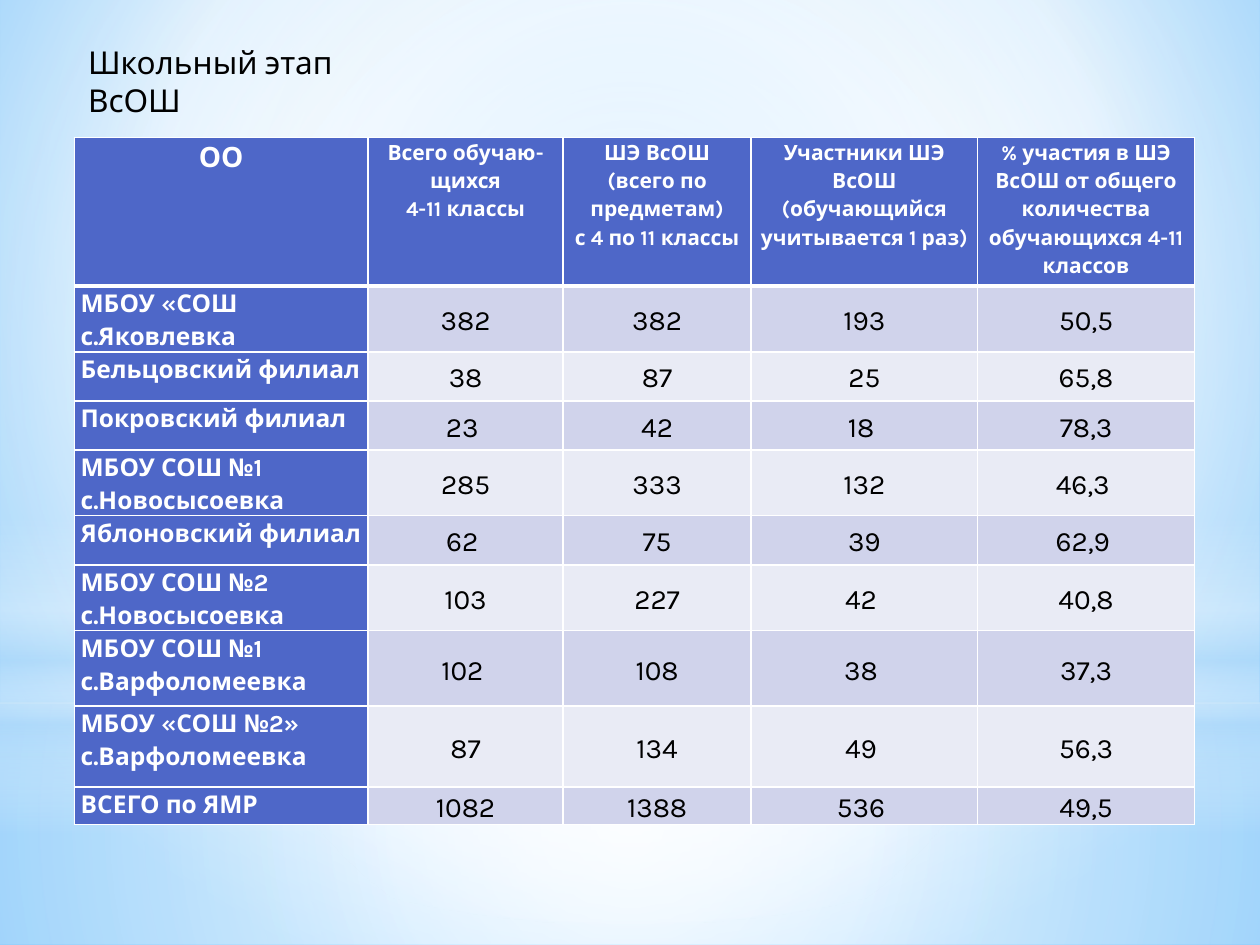
from dataclasses import dataclass
from typing import Optional

from lxml.etree import SubElement
from pptx import Presentation
from pptx.dml.color import RGBColor
from pptx.enum.shapes import MSO_SHAPE
from pptx.enum.text import MSO_ANCHOR, PP_ALIGN
from pptx.oxml.ns import qn
from pptx.util import Inches, Pt


@dataclass(frozen=True)
class Theme:
    font: str = "Karla"
    white: str = "FFFFFF"
    black: str = "000000"
    sky: str = "B4DCFA"
    accent: str = "4E67C8"
    bands: tuple = ("D0D3EB", "E9EBF5")
    title_size: int = 18
    corner_size: int = 16
    header_size: int = 12
    label_size: int = 14
    value_size: int = 16


THEME = Theme()


@dataclass(frozen=True)
class Gradient:
    """Stops are (position, colour, opacity) with percentages; without a focus it runs downwards."""
    stops: tuple
    focus: Optional[tuple] = None


@dataclass(frozen=True)
class Glow:
    preset: MSO_SHAPE
    top: float
    height: float
    gradient: Gradient


@dataclass(frozen=True)
class CellStyle:
    fill: str
    color: str
    size: int
    bold: bool
    align: PP_ALIGN
    anchor: MSO_ANCHOR


CENTRE = (50, 50, 50, 50)
BACKDROP = Gradient(((0, "9ED5FF", 100), (60, THEME.white, 100), (100, "5BB9FF", 100)),
                    (20, 10, 20, 60))
GLOWS = (
    Glow(MSO_SHAPE.RECTANGLE, 5.58, 1.92, Gradient(
        ((0, THEME.white, 91), (37, THEME.white, 76), (100, THEME.sky, 79)), CENTRE)),
    Glow(MSO_SHAPE.RECTANGLE, 0, 5.58, Gradient(
        ((0, THEME.white, 89), (48, THEME.white, 62), (100, THEME.sky, 79)), CENTRE)),
    Glow(MSO_SHAPE.RECTANGLE, 4.12, 2.5, Gradient(
        ((0, THEME.white, 0), (29, THEME.white, 30), (45, THEME.sky, 40),
         (55, THEME.white, 26), (65, THEME.sky, 60), (100, THEME.white, 0)))),
    Glow(MSO_SHAPE.OVAL, 1.75, 5.58, Gradient(
        ((0, THEME.white, 100), (56, THEME.white, 0)), CENTRE)),
)

COLUMN_WIDTHS = (2.33, 1.55, 1.49, 1.8, 1.72)
ROW_HEIGHTS = (1.18,) + (0.39,) * 6 + (0.6, 0.64, 0.2)
HEADERS = (
    "ОО",
    "Всего обучаю-щихся\n4-11 классы",
    "ШЭ ВсОШ (всего по предметам)\nс 4 по 11 классы",
    "Участники ШЭ ВсОШ (обучающийся учитывается 1 раз)",
    "% участия в ШЭ ВсОШ от общего количества обучающихся 4-11 классов",
)
SCHOOLS = (
    ("МБОУ «СОШ с.Яковлевка", "382", "382", "193", "50,5"),
    ("Бельцовский филиал", "38", "87", "25", "65,8"),
    ("Покровский филиал", "23 ", "42", "18 ", "78,3"),
    ("МБОУ СОШ №1 с.Новосысоевка", "285", "333", "132", "46,3 "),
    ("Яблоновский филиал", "62 ", "75", "39", "62,9 "),
    ("МБОУ СОШ №2 с.Новосысоевка", "103", "227", "42 ", "40,8"),
    ("МБОУ СОШ №1 с.Варфоломеевка", "102 ", "108", "38 ", "37,3"),
    ("МБОУ «СОШ №2» с.Варфоломеевка", "87", "134", "49 ", "56,3"),
    ("ВСЕГО по ЯМР", "1082", "1388", "536 ", "49,5"),
)


def apply_gradient(owner, gradient: Gradient) -> None:
    """Turn the solid fill found inside owner into a gradient."""
    solid = owner.find(".//" + qn("a:solidFill"))
    fill = solid.makeelement(qn("a:gradFill"), {"rotWithShape": "1"})
    stops = SubElement(fill, qn("a:gsLst"))
    for position, color, opacity in gradient.stops:
        stop = SubElement(stops, qn("a:gs"), pos=str(position * 1000))
        rgb = SubElement(stop, qn("a:srgbClr"), val=color)
        if opacity < 100:
            SubElement(rgb, qn("a:alpha"), val=str(opacity * 1000))
    if gradient.focus:
        shade = SubElement(fill, qn("a:path"), {"path": "circle"})
        edges = {side: str(value * 1000) for side, value in zip("ltrb", gradient.focus)}
        SubElement(shade, qn("a:fillToRect"), edges)
    else:
        SubElement(fill, qn("a:lin"), ang=str(90 * 60000), scaled="0")
    solid.getparent().replace(solid, fill)


def draw_backdrop(slide) -> None:
    slide.background.fill.solid()
    slide.background.fill.fore_color.rgb = RGBColor.from_string(THEME.white)
    apply_gradient(slide.element.find(".//" + qn("p:bgPr")), BACKDROP)
    for glow in GLOWS:
        shape = slide.shapes.add_shape(glow.preset, Inches(0), Inches(glow.top),
                                       Inches(10), Inches(glow.height))
        shape.shadow.inherit = False
        shape.line.fill.background()
        shape.fill.solid()
        shape.fill.fore_color.rgb = RGBColor.from_string(THEME.white)
        apply_gradient(shape.element, glow.gradient)


def add_text(paragraph, text: str, size: int, color: str, bold: bool = False) -> None:
    run = paragraph.add_run()
    run.text = text
    run.font.name = THEME.font
    run.font.size = Pt(size)
    run.font.bold = bold
    run.font.color.rgb = RGBColor.from_string(color)


def set_borders(cell, top: int, bottom: int) -> None:
    """Draw white cell borders; the side ones are 1 point wide."""
    properties = cell._tc.get_or_add_tcPr()
    for index, (side, width) in enumerate(zip("LRTB", (1, 1, top, bottom))):
        line = properties.makeelement(qn(f"a:ln{side}"), {"w": str(Pt(width))})
        SubElement(SubElement(line, qn("a:solidFill")), qn("a:srgbClr"), val=THEME.white)
        properties.insert(index, line)


def cell_style(row: int, column: int) -> CellStyle:
    if row == 0:
        size = THEME.header_size if column else THEME.corner_size
        return CellStyle(THEME.accent, THEME.white, size, True, PP_ALIGN.CENTER, MSO_ANCHOR.TOP)
    if column == 0:
        return CellStyle(THEME.accent, THEME.white, THEME.label_size, True,
                         PP_ALIGN.LEFT, MSO_ANCHOR.TOP)
    return CellStyle(THEME.bands[(row - 1) % 2], THEME.black, THEME.value_size, False,
                     PP_ALIGN.CENTER, MSO_ANCHOR.MIDDLE)


def fill_cell(cell, text: str, style: CellStyle) -> None:
    cell.fill.solid()
    cell.fill.fore_color.rgb = RGBColor.from_string(style.fill)
    cell.margin_left = cell.margin_right = Inches(0.05)
    cell.margin_top = cell.margin_bottom = Inches(0)
    cell.vertical_anchor = style.anchor
    frame = cell.text_frame
    for index, line in enumerate(text.split("\n")):
        paragraph = frame.add_paragraph() if index else frame.paragraphs[0]
        paragraph.alignment = style.align
        paragraph.line_spacing = 1.15
        add_text(paragraph, line, style.size, style.color, style.bold)


def draw_table(slide) -> None:
    rows = (HEADERS,) + SCHOOLS
    table = slide.shapes.add_table(len(rows), len(HEADERS), Inches(0.59), Inches(1.09),
                                   Inches(sum(COLUMN_WIDTHS)), Inches(sum(ROW_HEIGHTS))).table
    table.horz_banding = False
    for column, width in zip(table.columns, COLUMN_WIDTHS):
        column.width = Inches(width)
    for row, height in zip(table.rows, ROW_HEIGHTS):
        row.height = Inches(height)
    for row, texts in enumerate(rows):
        for column, text in enumerate(texts):
            cell = table.cell(row, column)
            fill_cell(cell, text, cell_style(row, column))
            set_borders(cell, top=3 if row == 1 else 1, bottom=3 if row == 0 else 1)


def draw_title(slide) -> None:
    box = slide.shapes.add_textbox(Inches(0.6), Inches(0.29), Inches(2.75), Inches(0.4))
    box.text_frame.word_wrap = True
    add_text(box.text_frame.paragraphs[0], "Школьный этап ВсОШ", THEME.title_size, THEME.black)


def main() -> None:
    presentation = Presentation()
    presentation.slide_width, presentation.slide_height = Inches(10), Inches(7.5)
    slide = presentation.slides.add_slide(presentation.slide_layouts[6])
    draw_backdrop(slide)
    draw_table(slide)
    draw_title(slide)
    presentation.save("out.pptx")


if __name__ == "__main__":
    main()
